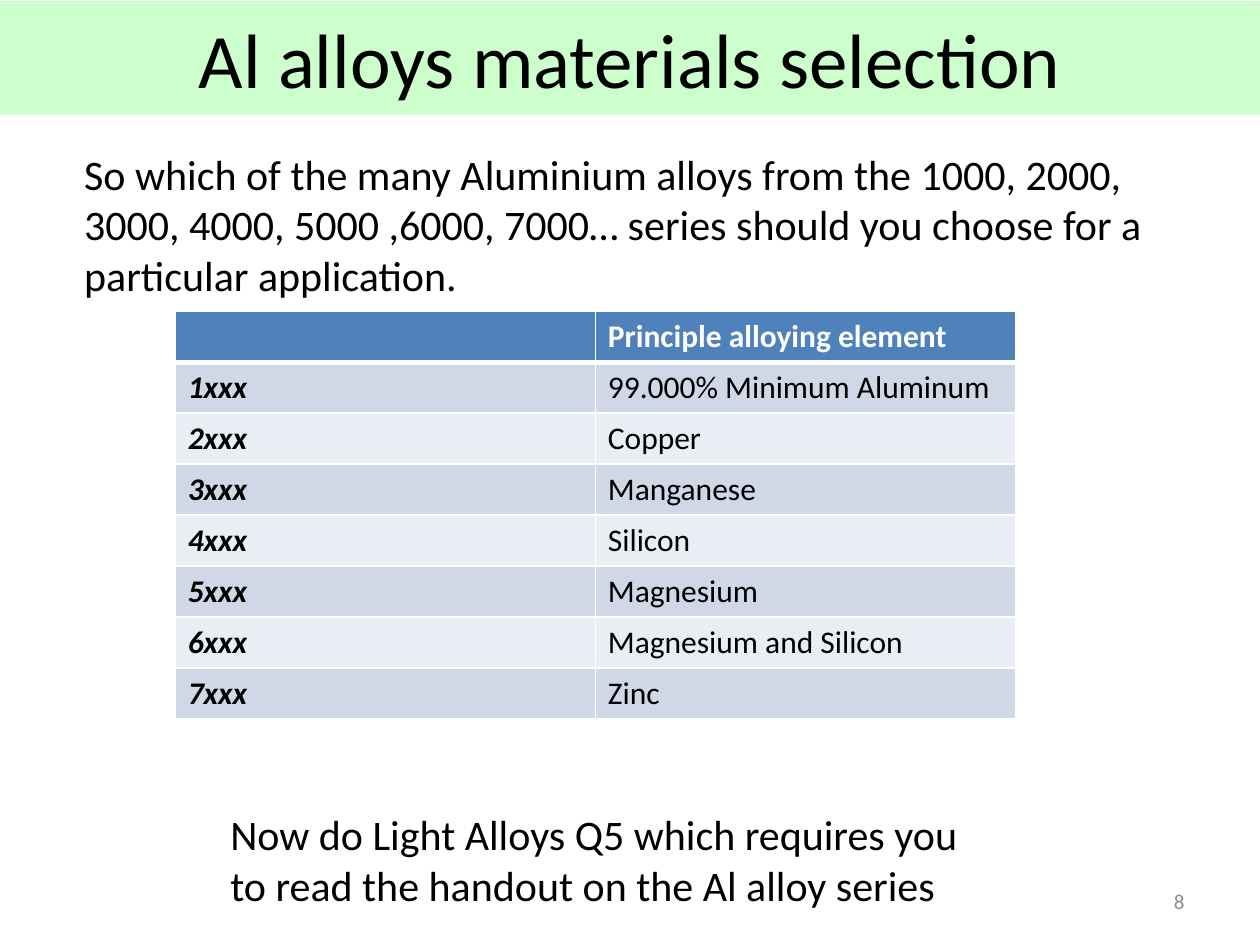
from lxml import etree
from pptx import Presentation
from pptx.dml.color import RGBColor
from pptx.enum import text
from pptx.oxml import ns
from pptx.util import Inches, Pt

BLACK = RGBColor(0x00, 0x00, 0x00)
WHITE = RGBColor(0xFF, 0xFF, 0xFF)
GREY = RGBColor(0x8C, 0x8C, 0x8C)
MINT = RGBColor(0xCC, 0xFF, 0xCC)
HEADER_BLUE = RGBColor(0x4F, 0x81, 0xBD)
BAND_DARK = RGBColor(0xD0, 0xD8, 0xE8)
BAND_LIGHT = RGBColor(0xE9, 0xED, 0xF4)


def write(frame, words, size, color=BLACK, bold=False, italic=False):
    run = frame.paragraphs[0].add_run()
    run.text = words
    run.font.name = "Calibri"
    run.font.size = Pt(size)
    run.font.color.rgb = color
    run.font.bold = bold
    run.font.italic = italic


def add_border(cell, side, points):
    line = etree.SubElement(cell._tc.get_or_add_tcPr(), ns.qn(f"a:ln{side}"), w=str(Pt(points)))
    fill = etree.SubElement(line, ns.qn("a:solidFill"))
    etree.SubElement(fill, ns.qn("a:srgbClr"), val=str(WHITE))


prs = Presentation()
prs.slide_width, prs.slide_height = Inches(10), Inches(7.5)
slide = prs.slides.add_slide(prs.slide_layouts[5])

# Title band
title = slide.shapes.title
title.left, title.top = Inches(0), Inches(0.01)
title.width, title.height = Inches(10), Inches(0.9)
title.fill.solid()
title.fill.fore_color.rgb = MINT
title.text_frame.vertical_anchor = text.MSO_ANCHOR.MIDDLE
title.text_frame.paragraphs[0].alignment = text.PP_ALIGN.CENTER
write(title.text_frame, "Al alloys materials selection", 44)

# Slide number
number = slide.shapes.add_textbox(Inches(7.17), Inches(6.95), Inches(2.33), Inches(0.4)).text_frame
number.word_wrap = True
number.vertical_anchor = text.MSO_ANCHOR.MIDDLE
number.paragraphs[0].alignment = text.PP_ALIGN.RIGHT
write(number, "8", 12, GREY)

# Alloy series table
series = [
    ("", "Principle alloying element"),
    ("1xxx", "99.000% Minimum Aluminum"),
    ("2xxx", "Copper"),
    ("3xxx", "Manganese"),
    ("4xxx", "Silicon"),
    ("5xxx", "Magnesium"),
    ("6xxx", "Magnesium and Silicon"),
    ("7xxx", "Zinc"),
]
alloys = slide.shapes.add_table(
    len(series), 2, Inches(1.39), Inches(2.47), Inches(6.67), Inches(3.24)
).table
for r, row in enumerate(series):
    header = r == 0
    for c, words in enumerate(row):
        cell = alloys.cell(r, c)
        for side in "LRTB":
            thick = (header and side == "B") or (r == 1 and side == "T")
            add_border(cell, side, 3 if thick else 1)
        cell.fill.solid()
        cell.fill.fore_color.rgb = HEADER_BLUE if header else (BAND_LIGHT, BAND_DARK)[r % 2]
        if words:
            write(cell.text_frame, words, 18, WHITE if header else BLACK,
                  bold=header or c == 0, italic=not header and c == 0)

# Question above the table and task below it
for left, top, width, height, words in [
    (0.57, 1.13, 8.93, 1.31,
     "So which of the many Aluminium alloys from the 1000, 2000, 3000, 4000, 5000 ,6000, 7000… "
     "series should you choose for a particular application."),
    (1.73, 6.37, 6, 0.91,
     "Now do Light Alloys Q5 which requires you to read the handout on the Al alloy series"),
]:
    passage = slide.shapes.add_textbox(
        Inches(left), Inches(top), Inches(width), Inches(height)
    ).text_frame
    passage.word_wrap = True
    passage.auto_size = text.MSO_AUTO_SIZE.SHAPE_TO_FIT_TEXT
    write(passage, words, 24)

prs.save("out.pptx")
